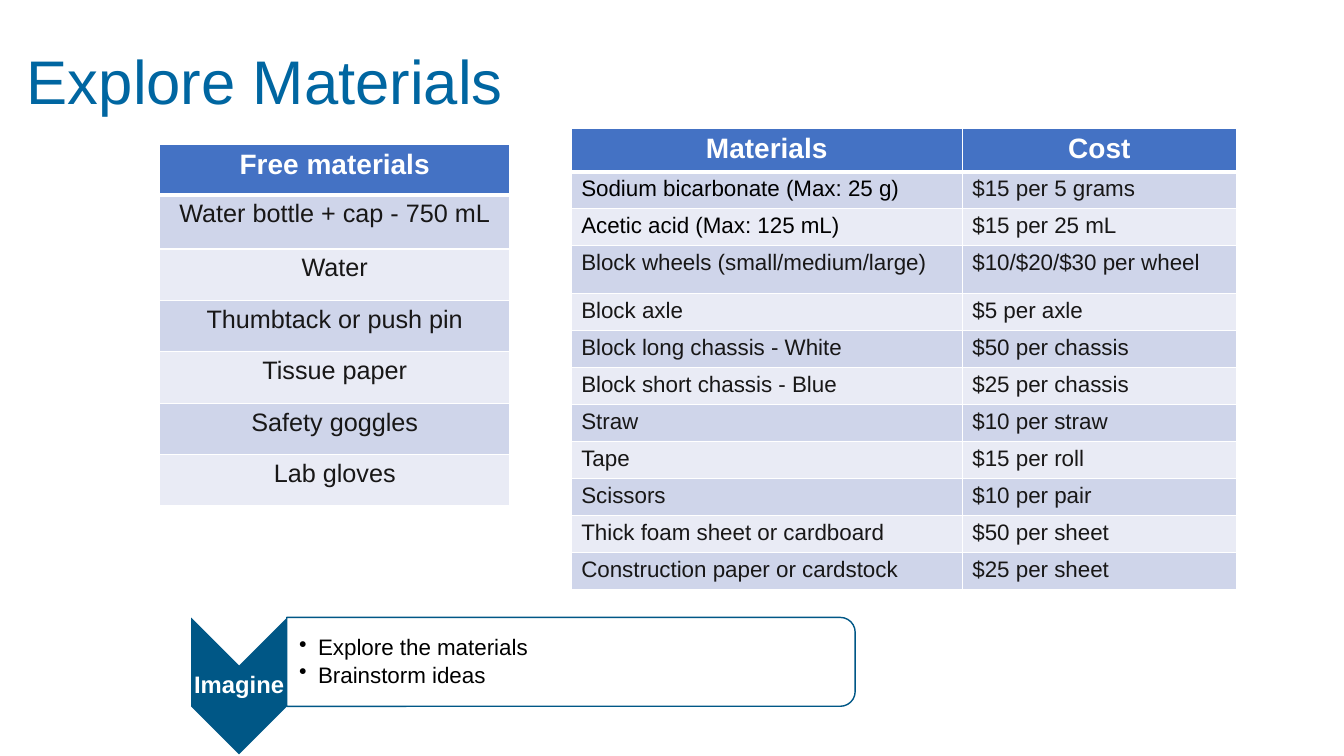
from lxml import etree
from pptx import Presentation
from pptx import util as u
from pptx.dml.color import RGBColor
from pptx.enum import shapes, text
from pptx.oxml import ns

FONT = "Arial"
TITLE_BLUE = RGBColor(0x00, 0x66, 0xA1)
STEP_BLUE = RGBColor(0x00, 0x57, 0x86)
HEADER_BLUE = RGBColor(0x44, 0x72, 0xC4)
BAND_DARK = RGBColor(0xCF, 0xD5, 0xEA)
BAND_LIGHT = RGBColor(0xE9, 0xEB, 0xF5)
INK = RGBColor(0x18, 0x17, 0x17)
BLACK = RGBColor(0, 0, 0)
WHITE = RGBColor(0xFF, 0xFF, 0xFF)

FREE_MATERIALS = [
    ["Free materials"],
    ["Water bottle + cap - 750 mL"],
    ["Water"],
    ["Thumbtack or push pin"],
    ["Tissue paper"],
    ["Safety goggles"],
    ["Lab gloves"],
]
PRICED_MATERIALS = [
    ["Materials", "Cost"],
    ["Sodium bicarbonate (Max: 25 g)", "$15 per 5 grams"],
    ["Acetic acid (Max: 125 mL)", "$15 per 25 mL"],
    ["Block wheels (small/medium/large)", "$10/$20/$30 per wheel"],
    ["Block axle", "$5 per axle"],
    ["Block long chassis - White", "$50 per chassis"],
    ["Block short chassis - Blue", "$25 per chassis"],
    ["Straw", "$10 per straw"],
    ["Tape", "$15 per roll"],
    ["Scissors", "$10 per pair"],
    ["Thick foam sheet or cardboard", "$50 per sheet"],
    ["Construction paper or cardstock", "$25 per sheet"],
]
CHEMICALS = {row[0] for row in PRICED_MATERIALS[1:3]}


def points(*lengths):
    return [u.Pt(length) for length in lengths]


def add_run(paragraph, words, size, color, bold=False):
    run = paragraph.add_run()
    run.text = words
    run.font.name = FONT
    run.font.size = u.Pt(size)
    run.font.bold = bold
    run.font.color.rgb = color


def add_text(slide, box, lines, size, color, bold=False, align=text.PP_ALIGN.LEFT,
             margins=(7.2, 3.6, 7.2, 3.6), bulleted=False):
    """Add a middle-anchored text box; margins run left, top, right, bottom."""
    frame = slide.shapes.add_textbox(*points(*box)).text_frame
    frame.word_wrap = True
    frame.vertical_anchor = text.MSO_ANCHOR.MIDDLE
    (frame.margin_left, frame.margin_top,
     frame.margin_right, frame.margin_bottom) = points(*margins)
    for index, line in enumerate(lines):
        paragraph = frame.add_paragraph() if index else frame.paragraphs[0]
        paragraph.alignment = align
        paragraph.line_spacing = 0.9
        if bulleted:
            paragraph.space_after = u.Pt(2.4)
            add_bullet(paragraph)
        add_run(paragraph, line, size, color, bold)


def add_bullet(paragraph, indent=13.5):
    properties = paragraph._p.get_or_add_pPr()
    properties.set("marL", str(u.Pt(indent)))
    properties.set("indent", str(-u.Pt(indent)))
    etree.SubElement(properties, ns.qn("a:buChar")).set("char", "•")


def add_turned_shape(slide, kind, box, fill, line=None):
    """Add a preset shape turned a quarter clockwise; box is its unturned frame."""
    shape = slide.shapes.add_shape(kind, *points(*box))
    shape.rotation = 90
    shape.shadow.inherit = False
    shape.fill.solid()
    shape.fill.fore_color.rgb = fill
    if line is None:
        shape.line.fill.background()
    else:
        shape.line.color.rgb = line
        shape.line.width = u.Pt(1)


def add_borders(cell, is_header, below_header):
    widths = {"lnL": 1, "lnR": 1, "lnT": 3 if below_header else 1,
              "lnB": 3 if is_header else 1}
    properties = cell._tc.get_or_add_tcPr()
    for side, width in widths.items():
        border = etree.SubElement(properties, ns.qn("a:" + side), w=str(u.Pt(width)))
        fill = etree.SubElement(border, ns.qn("a:solidFill"))
        etree.SubElement(fill, ns.qn("a:srgbClr")).set("val", str(WHITE))


def add_materials_table(slide, left, top, widths, heights, rows, size, align):
    frame = slide.shapes.add_table(
        len(rows), len(widths), *points(left, top, sum(widths), sum(heights)))
    table = frame.table
    table.horz_banding = False
    for column, width in zip(table.columns, widths):
        column.width = u.Pt(width)
    for r, (height, values) in enumerate(zip(heights, rows)):
        table.rows[r].height = u.Pt(height)
        is_header = r == 0
        for c, value in enumerate(values):
            cell = table.cell(r, c)
            add_borders(cell, is_header, r == 1)
            cell.fill.solid()
            paragraph = cell.text_frame.paragraphs[0]
            if is_header:
                cell.fill.fore_color.rgb = HEADER_BLUE
                paragraph.alignment = text.PP_ALIGN.CENTER
                add_run(paragraph, value, 20, WHITE, bold=True)
            else:
                cell.fill.fore_color.rgb = BAND_DARK if r % 2 else BAND_LIGHT
                paragraph.alignment = align
                add_run(paragraph, value, size, BLACK if value in CHEMICALS else INK)


def add_imagine_step(slide):
    add_turned_shape(slide, shapes.MSO_SHAPE.CHEVRON,
                     (121.9, 455.8, 97.7, 68.4), STEP_BLUE)
    add_text(slide, (136.6, 475.2, 68.4, 29.3), ["Imagine"], 17, WHITE, bold=True,
             align=text.PP_ALIGN.CENTER, margins=(0.8, 0.8, 0.8, 0.8))
    add_turned_shape(slide, shapes.MSO_SHAPE.ROUND_2_SAME_RECTANGLE,
                     (376.1, 269.8, 63.5, 406), WHITE, STEP_BLUE)
    add_text(slide, (205.1, 444.2, 402.5, 57.4),
             ["Explore the materials", "Brainstorm ideas"], 16, BLACK,
             margins=(8.6, 0.8, 0.8, 0.8), bulleted=True)


def main():
    presentation = Presentation()
    presentation.slide_width, presentation.slide_height = points(960, 540)
    slide = presentation.slides.add_slide(presentation.slide_layouts[6])

    add_text(slide, (12.2, 7.9, 828, 104.4), ["Explore Materials"], 44, TITLE_BLUE)
    add_imagine_step(slide)
    add_materials_table(slide, 114, 103.2, [250.2], [36, 38.7] + [36.7] * 5,
                        FREE_MATERIALS, 18, text.PP_ALIGN.CENTER)
    add_materials_table(slide, 408, 91.4, [279.4, 195.8],
                        [29.3, 25, 25, 34] + [25] * 8,
                        PRICED_MATERIALS, 16, text.PP_ALIGN.LEFT)

    presentation.save("out.pptx")


if __name__ == "__main__":
    main()
